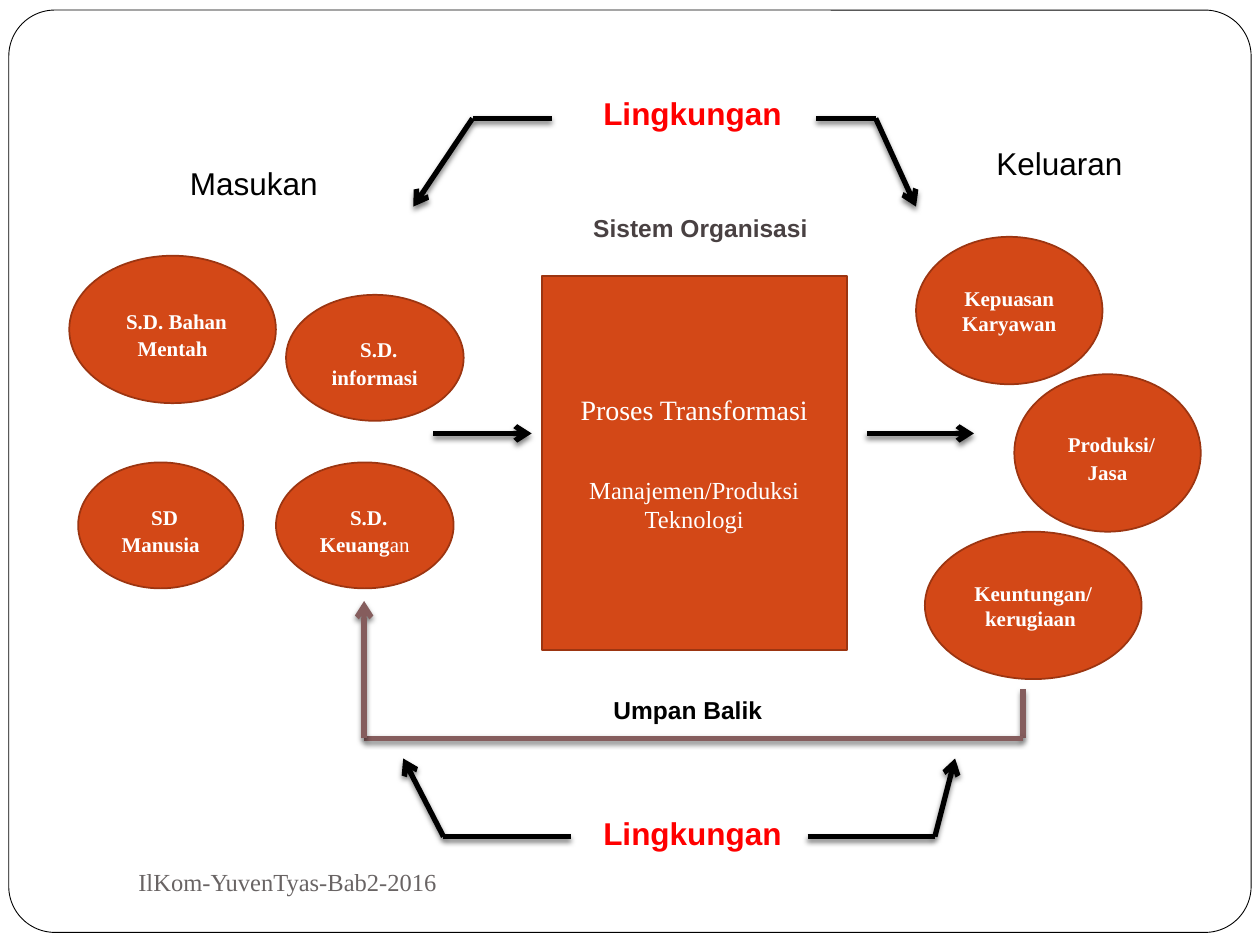
from lxml import etree
from pptx import Presentation
from pptx.dml.color import RGBColor
from pptx.enum import shapes, text
from pptx.oxml.ns import qn
from pptx.util import Inches, Pt

HUES = {"white": "FFFFFF", "black": "000000", "fill": "D34817", "edge": "9C3511",
        "back": "855D5D", "red": "FF0000", "head": "494142", "foot": "696464"}
SERIF, SANS = "Times New Roman", "Arial"
PAD = (" ", 18, False)

NODES = [
    ("RECTANGLE", (4.3, 2.19, 2.42, 2.97),
     [[("Proses Transformasi", 16, False)], [("Manajemen/Produksi Teknologi", 14, False)]]),
    ("OVAL", (7.27, 1.88, 1.48, 1.17), [[("Kepuasan Karyawan", 12, True)]]),
    ("OVAL", (8.05, 2.97, 1.48, 1.25), [[PAD, ("Produksi/", 12, True)], [("Jasa", 12, True)]]),
    ("OVAL", (7.34, 4.22, 1.72, 1.17), [[("Keuntungan/kerugiaan ", 12, True)]]),
    ("OVAL", (2.19, 3.67, 1.41, 1),
     [[PAD, ("S.D.", 12, True)], [("Keuang", 12, True), ("an", 12, False)]]),
    ("OVAL", (0.62, 3.67, 1.31, 1), [[PAD, ("SD", 12, True)], [("Manusia", 12, True)]]),
    ("OVAL", (2.27, 2.34, 1.41, 1), [[PAD, ("S.D. informasi", 12, True)]]),
    ("OVAL", (0.55, 2.03, 1.64, 1.17), [[PAD, ("S.D. Bahan Mentah", 12, True)]]),
]
LABELS = [
    ("Lingkungan", (4.69, 6.41, 1.63, 0.4), 18, "red", True),
    ("Lingkungan", (4.69, 0.7, 1.63, 0.4), 18, "red", True),
    ("Keluaran", (7.81, 1.09, 1.21, 0.4), 18, "black", False),
    ("Masukan", (1.41, 1.25, 1.23, 0.4), 18, "black", False),
    ("Sistem Organisasi", (4.61, 1.64, 1.91, 0.34), 14, "head", True),
    ("Umpan Balik", (4.77, 5.47, 1.39, 0.34), 14, "black", True),
]
FOOT = ("IlKom-YuvenTyas-Bab2-2016", (1, 6.75, 4.33, 0.5), 14, "foot", False)
ROUTES = [
    ("back", [(8.12, 5.47), (8.12, 5.86), (2.89, 5.86), (2.89, 4.77)]),
    ("black", [(3.44, 3.44), (4.22, 3.44)]),
    ("black", [(6.88, 3.44), (7.73, 3.44)]),
    ("black", [(6.41, 6.64), (7.42, 6.64), (7.58, 6.02)]),
    ("black", [(4.53, 6.64), (3.52, 6.64), (3.2, 6.02)]),
    ("black", [(6.48, 0.94), (6.95, 0.94), (7.27, 1.64)]),
    ("black", [(4.38, 0.94), (3.75, 0.94), (3.28, 1.64)]),
]


def hue(name):
    return RGBColor.from_string(HUES[name])


def style(run, size, color, bold, face):
    run.font.color.rgb = hue(color)
    for key, value in {"size": Pt(size), "bold": bold, "name": face}.items():
        setattr(run.font, key, value)


def shape(slide, kind, box, fill, edge, width):
    item = slide.shapes.add_shape(getattr(shapes.MSO_SHAPE, kind), *map(Inches, box))
    item.shadow.inherit = False
    item.fill.solid()
    item.fill.fore_color.rgb = hue(fill)
    item.line.color.rgb = hue(edge)
    item.line.width = Pt(width)
    return item


def node(slide, kind, box, paras):
    frame = shape(slide, kind, box, "fill", "edge", 1).text_frame
    frame.word_wrap = True
    frame.vertical_anchor = text.MSO_ANCHOR.MIDDLE
    for i, runs in enumerate(paras):
        para = frame.add_paragraph() if i else frame.paragraphs[0]
        para.alignment = text.PP_ALIGN.CENTER
        if i and kind == "RECTANGLE":
            para.space_before = Pt(28)
        for words, size, bold in runs:
            run = para.add_run()
            run.text = words
            style(run, size, "white", bold, SERIF)


def label(slide, words, box, size, color, bold, face=SANS, wrap=False):
    frame = slide.shapes.add_textbox(*map(Inches, box)).text_frame
    frame.word_wrap = wrap
    if wrap:
        frame.vertical_anchor = text.MSO_ANCHOR.MIDDLE
    else:
        frame.auto_size = text.MSO_AUTO_SIZE.SHAPE_TO_FIT_TEXT
    run = frame.paragraphs[0].add_run()
    run.text = words
    style(run, size, color, bold, face)


def shade(line):
    effect = etree.SubElement(line._element.spPr, qn("a:effectLst"))
    shadow = etree.SubElement(effect, qn("a:outerShdw"), blurRad=str(Pt(3)),
                              dist=str(Pt(2)), dir="5400000", rotWithShape="0")
    color = etree.SubElement(shadow, qn("a:srgbClr"), val=HUES["black"])
    etree.SubElement(color, qn("a:alpha"), val="50000")


def route(slide, color, points):
    for start, end in zip(points, points[1:]):
        line = slide.shapes.add_connector(shapes.MSO_CONNECTOR.STRAIGHT,
                                          *map(Inches, start + end))
        line.line.color.rgb = hue(color)
        line.line.width = Pt(3)
        if end == points[-1]:
            etree.SubElement(line.line._get_or_add_ln(), qn("a:tailEnd"), type="arrow")
        shade(line)


def main():
    deck = Presentation()
    deck.slide_width, deck.slide_height = Inches(10), Inches(7.5)
    slide = deck.slides.add_slide(deck.slide_layouts[6])
    frame = shape(slide, "ROUNDED_RECTANGLE", (0.07, 0.08, 9.86, 7.32), "white", "black", 0.5)
    frame.adjustments[0] = 0.05
    for item in NODES:
        node(slide, *item)
    for item in ROUTES:
        route(slide, *item)
    for item in LABELS:
        label(slide, *item)
    label(slide, *FOOT, face=SERIF, wrap=True)
    deck.save("out.pptx")


if __name__ == "__main__":
    main()
